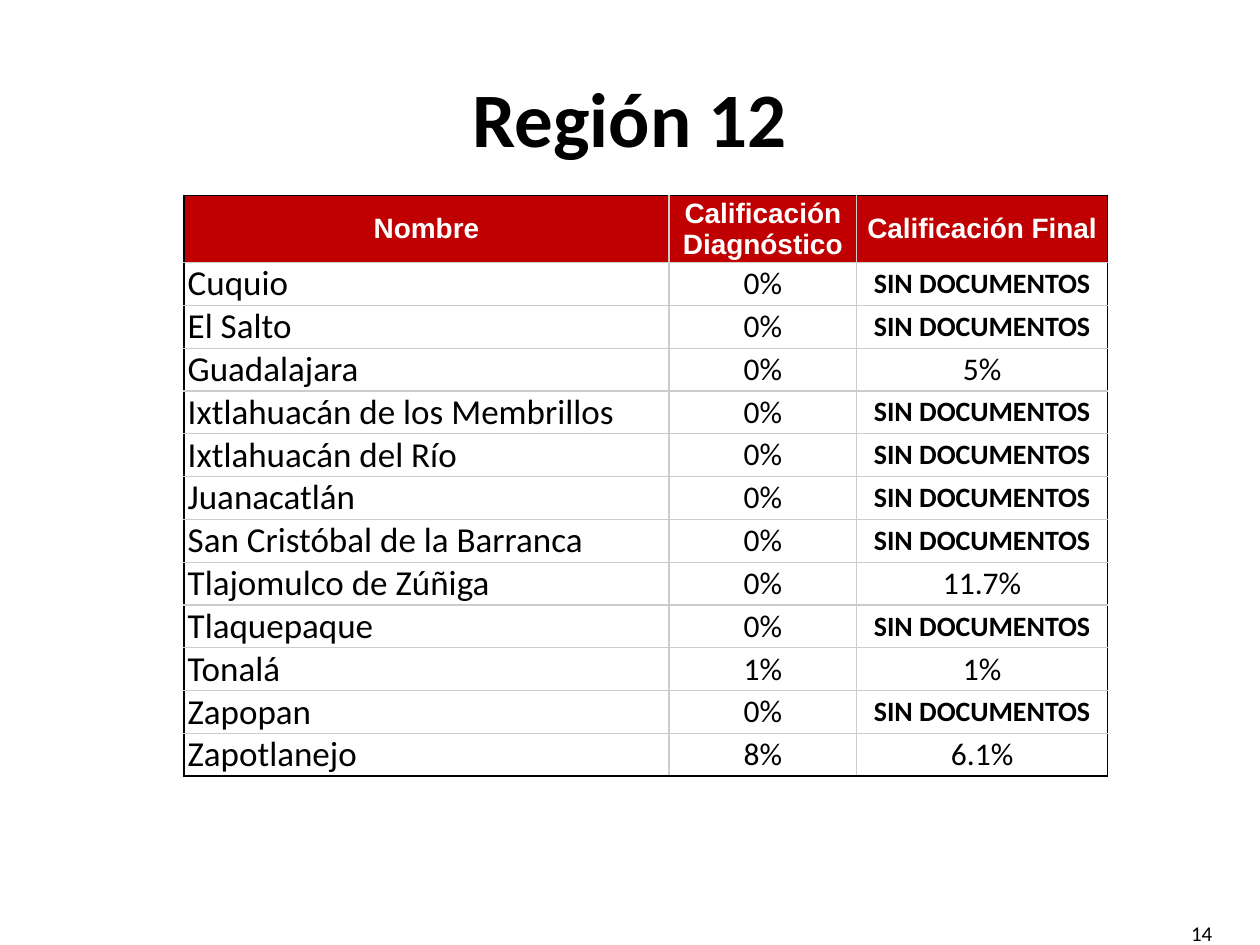
import dataclasses

import pptx
import pptx.dml.color
import pptx.enum.text
import pptx.oxml
import pptx.oxml.ns
import pptx.util

ALIGN = pptx.enum.text.PP_ALIGN
MIDDLE = pptx.enum.text.MSO_ANCHOR.MIDDLE
NO_DOCUMENTS = "SIN DOCUMENTOS"
HEADINGS = ("Nombre", "Calificación Diagnóstico", "Calificación Final")
MUNICIPALITIES = (
    ("Cuquio", "0%", NO_DOCUMENTS),
    ("El Salto", "0%", NO_DOCUMENTS),
    ("Guadalajara", "0%", "5%"),
    ("Ixtlahuacán de los Membrillos", "0%", NO_DOCUMENTS),
    ("Ixtlahuacán del Río", "0%", NO_DOCUMENTS),
    ("Juanacatlán", "0%", NO_DOCUMENTS),
    ("San Cristóbal de la Barranca", "0%", NO_DOCUMENTS),
    ("Tlajomulco de Zúñiga", "0%", "11.7%"),
    ("Tlaquepaque", "0%", NO_DOCUMENTS),
    ("Tonalá", "1%", "1%"),
    ("Zapopan", "0%", NO_DOCUMENTS),
    ("Zapotlanejo", "8%", "6.1%"),
)


@dataclasses.dataclass(frozen=True)
class Theme:
    body_font: str = "Calibri"
    header_font: str = "Arial"
    ink: str = "000000"
    paper: str = "FFFFFF"
    accent: str = "C00000"
    rule: str = "CCCCCC"
    title_size: int = 44
    name_size: int = 20
    score_size: int = 18
    label_size: int = 16
    number_size: int = 12
    frame_width: float = 1
    rule_width: float = 0.75


def write_text(frame, text, *, font, size, color, bold=False, align=ALIGN.CENTER):
    paragraph = frame.paragraphs[0]
    paragraph.alignment = align
    run = paragraph.add_run()
    run.text = text
    run.font.name = font
    run.font.size = pptx.util.Pt(size)
    run.font.bold = bold
    run.font.color.rgb = pptx.dml.color.RGBColor.from_string(color)


class SlideBuilder:
    """Draws elements on one slide, measured on a grid of 100 columns by 75 rows."""

    def __init__(self, presentation, theme):
        self.theme = theme
        self.slide = presentation.slides.add_slide(presentation.slide_layouts[6])
        self.column = presentation.slide_width / 100
        self.row = presentation.slide_height / 75

    def place(self, left, top, width, height):
        return (
            round(left * self.column),
            round(top * self.row),
            round(width * self.column),
            round(height * self.row),
        )

    def text(self, text, box, **text_format):
        frame = self.slide.shapes.add_textbox(*self.place(*box)).text_frame
        frame.word_wrap = True
        frame.vertical_anchor = MIDDLE
        write_text(
            frame, text, font=self.theme.body_font, color=self.theme.ink, **text_format
        )

    def border(self, cell, side, outer):
        theme = self.theme
        color = theme.ink if outer else theme.rule
        width = pptx.util.Pt(theme.frame_width if outer else theme.rule_width)
        line = pptx.oxml.parse_xml(
            f'<a:ln{side} {pptx.oxml.ns.nsdecls("a")} w="{width}">'
            f'<a:solidFill><a:srgbClr val="{color}"/></a:solidFill></a:ln{side}>'
        )
        cell._tc.get_or_add_tcPr().append(line)

    def cell_format(self, text, row, column):
        theme = self.theme
        if row == 0:
            return dict(
                font=theme.header_font, size=theme.label_size, color=theme.paper, bold=True
            )
        body = dict(font=theme.body_font, color=theme.ink)
        if column == 0:
            return dict(body, size=theme.name_size, align=ALIGN.LEFT)
        if text == NO_DOCUMENTS:
            return dict(body, size=theme.label_size, bold=True)
        return dict(body, size=theme.score_size)

    def table(self, records, left, top, widths, header_height, row_height):
        heights = [header_height] + [row_height] * (len(records) - 1)
        box = self.place(left, top, sum(widths), sum(heights))
        table = self.slide.shapes.add_table(len(records), len(widths), *box).table
        table.first_row = table.horz_banding = False
        for column, width in zip(table.columns, widths):
            column.width = round(width * self.column)
        last_row, last_column = len(heights) - 1, len(widths) - 1
        for r, (record, height) in enumerate(zip(records, heights)):
            table.rows[r].height = round(height * self.row)
            for c, text in enumerate(record):
                cell = table.cell(r, c)
                cell.margin_left = cell.margin_right = pptx.util.Inches(0.03)
                cell.margin_top = cell.margin_bottom = 0
                cell.vertical_anchor = MIDDLE
                edges = {"L": c == 0, "R": c == last_column, "T": r == 0, "B": r == last_row}
                for side, outer in edges.items():
                    self.border(cell, side, outer)
                cell.fill.solid()
                fill = self.theme.paper if r else self.theme.accent
                cell.fill.fore_color.rgb = pptx.dml.color.RGBColor.from_string(fill)
                write_text(cell.text_frame, text, **self.cell_format(text, r, c))


def main():
    presentation = pptx.Presentation()
    presentation.slide_width = pptx.util.Inches(10)
    presentation.slide_height = pptx.util.Inches(7.5)
    theme = Theme()
    builder = SlideBuilder(presentation, theme)
    builder.text("14", (73.9, 72.1, 23.3, 4), size=theme.number_size, align=ALIGN.RIGHT)
    builder.table(
        (HEADINGS, *MUNICIPALITIES),
        left=14.6,
        top=15.5,
        widths=(38.5, 14.9, 19.9),
        header_height=4.9,
        row_height=3.4,
    )
    builder.text("Región 12", (5, 3, 90, 12.5), size=theme.title_size, bold=True)
    presentation.save("out.pptx")


if __name__ == "__main__":
    main()
